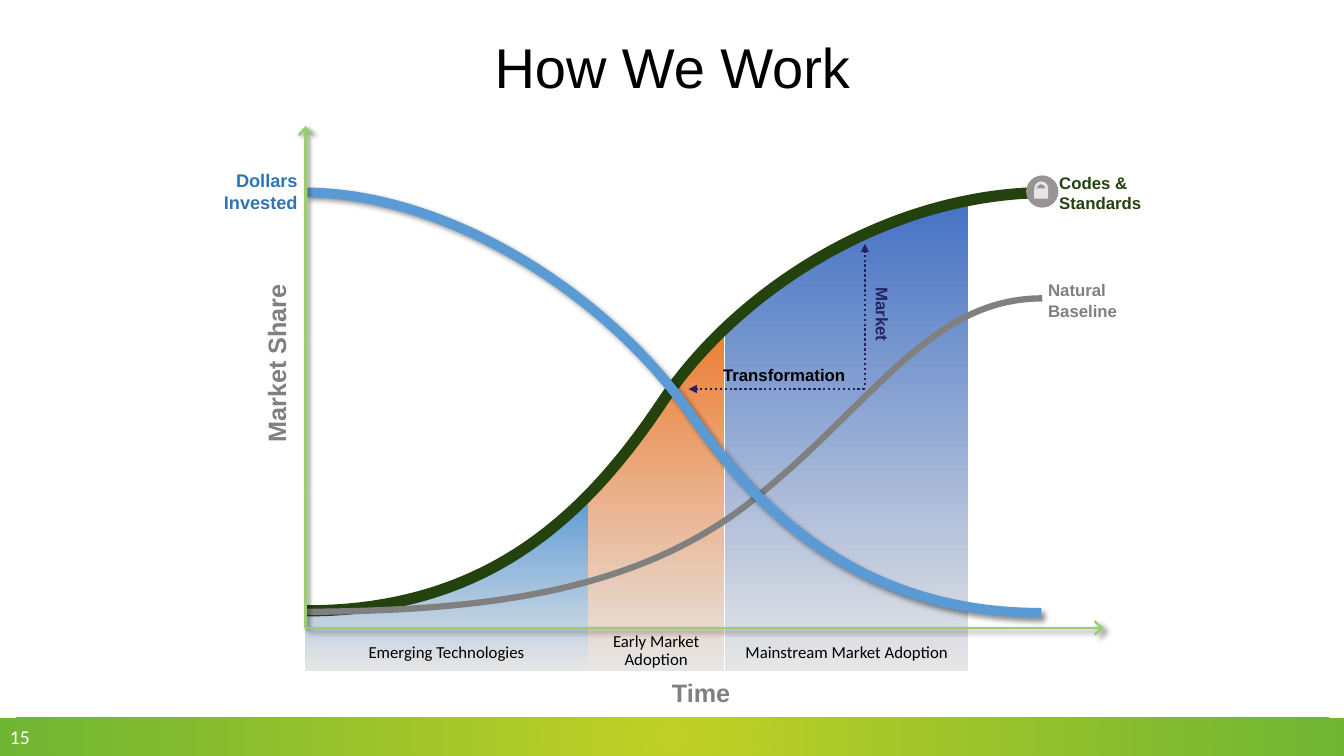
from lxml import etree
from pptx import Presentation
from pptx.dml.color import RGBColor
from pptx.enum.dml import MSO_LINE
from pptx.enum.shapes import MSO_CONNECTOR as CONNECTOR, MSO_SHAPE as SHAPE
from pptx.enum.text import MSO_ANCHOR as ANCHOR, PP_ALIGN as ALIGN
from pptx.oxml.ns import qn
from pptx.util import Inches, Pt

BLACK = RGBColor(0x00, 0x00, 0x00)
WHITE = RGBColor(0xFF, 0xFF, 0xFF)
GRAY = RGBColor(0x80, 0x80, 0x80)
LOCK_GRAY = RGBColor(0x98, 0x94, 0x94)
PALE = RGBColor(0xE7, 0xE6, 0xE6)
SKY = RGBColor(0x5B, 0x9B, 0xD5)
DEEP_SKY = RGBColor(0x2E, 0x75, 0xB6)
ORANGE = RGBColor(0xED, 0x7D, 0x31)
BLUE = RGBColor(0x44, 0x72, 0xC4)
NAVY = RGBColor(0x26, 0x22, 0x62)
FOREST = RGBColor(0x24, 0x42, 0x0E)
AXIS_GREEN = RGBColor(0x9A, 0xCD, 0x72)
LIME = RGBColor(0xC0, 0xD0, 0x25)
LEAF = RGBColor(0x6F, 0xB4, 0x33)


class Diagram:
    heading_font = "Arial"
    body_font = "Calibri"

    def __init__(self, slide):
        self.shapes = slide.shapes

    def effects(self, item, blur=None):
        """Set the outer shadow, or none when no blur is given."""
        props = item._element.spPr
        for old in props.findall(qn("a:effectLst")):
            props.remove(old)
        effects = etree.SubElement(props, qn("a:effectLst"))
        if blur:
            shadow = etree.SubElement(
                effects, qn("a:outerShdw"), blurRad=str(Pt(blur)),
                dist=str(Pt(3 if blur > 3 else 2)), dir="2700000",
                algn="tl", rotWithShape="0")
            color = etree.SubElement(shadow, qn("a:srgbClr"), val="000000")
            etree.SubElement(color, qn("a:alpha"), val="43000")

    def gradient(self, shape, first, last):
        shape.fill.gradient()
        shape.fill.gradient_angle = 270
        for stop, color, place in zip(shape.fill.gradient_stops, (first, last), (0, 1)):
            stop.color.rgb = color
            stop.position = place

    def shape(self, kind, x, y, w, h, color):
        shape = self.shapes.add_shape(kind, Inches(x), Inches(y), Inches(w), Inches(h))
        shape.fill.solid()
        shape.fill.fore_color.rgb = color
        shape.line.fill.background()
        shape.shadow.inherit = False
        return shape

    def outline(self, points, close):
        start, *rest = [(Inches(x), Inches(y)) for x, y in points]
        builder = self.shapes.build_freeform(*start)
        builder.add_line_segments(rest, close=close)
        return builder.convert_to_shape()

    def area(self, top, base, color):
        shape = self.outline(top + [(top[-1][0], base), (top[0][0], base)], True)
        self.gradient(shape, color, PALE)
        shape.line.fill.background()
        self.effects(shape)

    def curve(self, points, color, width, blur=None):
        """Draw a start point followed by cubic bends of two controls and an end."""
        shape = self.outline(points, False)
        segments = list(shape._element.spPr.iter(qn("a:lnTo")))
        for i in range(0, len(segments), 3):
            bend = etree.Element(qn("a:cubicBezTo"))
            segments[i].addprevious(bend)
            for segment in segments[i:i + 3]:
                bend.append(segment[0])
                segment.getparent().remove(segment)
        shape.fill.background()
        shape.line.color.rgb = color
        shape.line.width = Pt(width)
        self.effects(shape, blur)

    def arrow(self, start, end, color, width, head, head_width="med", dash=None, blur=None):
        line = self.shapes.add_connector(
            CONNECTOR.STRAIGHT, *(Inches(v) for v in start + end))
        line.line.color.rgb = color
        line.line.width = Pt(width)
        if dash:
            line.line.dash_style = dash
        etree.SubElement(line._element.spPr.find(qn("a:ln")), qn("a:tailEnd"),
                         type=head, w=head_width)
        self.effects(line, blur)

    def text(self, text, x, y, w, h, size=12, color=BLACK, bold=True, font=None,
             align=ALIGN.LEFT, anchor=ANCHOR.TOP, spacing=None, turn=0, fill=None):
        box = self.shapes.add_textbox(Inches(x), Inches(y), Inches(w), Inches(h))
        box.rotation = turn
        if fill is not None:
            box.fill.solid()
            box.fill.fore_color.rgb = fill
        frame = box.text_frame
        frame.word_wrap = True
        frame.vertical_anchor = anchor
        paragraph = frame.paragraphs[0]
        paragraph.alignment = align
        if spacing:
            paragraph.line_spacing = spacing
        run = paragraph.add_run()
        run.text = text
        run.font.name = font or self.heading_font
        run.font.size = Pt(size)
        run.font.bold = bold
        run.font.color.rgb = color


def main():
    deck = Presentation()
    deck.slide_width, deck.slide_height = Inches(40 / 3), Inches(7.5)
    diagram = Diagram(deck.slides.add_slide(deck.slide_layouts[6]))

    # Footer band, shaded outwards from its centre
    band = diagram.shape(SHAPE.RECTANGLE, 0, 7.12, 13.35, 0.38, LEAF)
    diagram.gradient(band, LIME, LEAF)
    linear = band._element.spPr.find(qn("a:gradFill")).find(qn("a:lin"))
    radial = etree.Element(qn("a:path"), path="circle")
    etree.SubElement(radial, qn("a:fillToRect"), l="50000", t="50000", r="50000", b="50000")
    linear.getparent().replace(linear, radial)
    diagram.text("15", 0, 7.14, 0.86, 0.34, size=14, color=WHITE, bold=False,
                 font=diagram.body_font)

    # Market phases under the adoption curve
    base = 6.66
    emerging = [(3.03, 6.05), (3.39, 6.05), (3.84, 5.99), (4.29, 5.89), (4.69, 5.73),
                (5.22, 5.44), (5.44, 5.29), (5.83, 4.91)]
    early = [(5.83, 4.91), (6.25, 4.42), (6.48, 4.06), (6.77, 3.68), (7.19, 3.23)]
    mainstream = [(7.19, 3.23), (7.67, 2.86), (8.21, 2.5), (8.7, 2.26), (9.26, 2.07),
                  (9.61, 1.99)]
    phases = [
        ("Emerging Technologies", emerging, SKY, 6.32, 0.3, None),
        ("Early Market Adoption", early, ORANGE, 6.23, 0.47, 0.9),
        ("Mainstream Market Adoption", mainstream, BLUE, 6.32, 0.3, None),
    ]
    for _, top, color, *_ in phases:
        diagram.area(top, base, color)

    # Adoption curve and natural baseline
    diagram.curve([(3.04, 6.06), (4.84, 6.06), (5.82, 5.11), (6.57, 3.99),
                   (7.31, 2.88), (8.8, 1.92), (10.38, 1.91)], FOREST, 8)
    diagram.curve([(3.04, 6.07), (4.84, 6.06), (6.37, 5.87), (7.52, 4.92),
                   (8.68, 3.98), (9.24, 2.96), (10.34, 2.96)], GRAY, 4.5)
    diagram.text("Natural Baseline", 10.3, 2.73, 1.06, 0.5, color=GRAY)

    # Axis titles
    diagram.text("Market Share", 1.84, 3.39, 1.8, 0.4, size=18, color=GRAY, turn=270)
    diagram.text("Time", 5.85, 6.67, 2.21, 0.4, size=18, color=GRAY, align=ALIGN.CENTER)

    # Market transformation arrows
    for start, end in (((8.58, 3.86), (6.83, 3.86)), ((8.58, 3.82), (8.58, 2.42))):
        diagram.arrow(start, end, NAVY, 1.75, "triangle", dash=MSO_LINE.ROUND_DOT)
    diagram.text("Transformation", 6.87, 3.57, 1.82, 0.3, align=ALIGN.CENTER)
    diagram.text("Market", 7.85, 2.97, 1.81, 0.3, color=NAVY, align=ALIGN.CENTER, turn=90)

    # Investment curve
    diagram.curve([(3.04, 1.91), (4.48, 1.92), (6.05, 2.95), (6.86, 4.12),
                   (7.67, 5.3), (8.75, 6.08), (10.33, 6.08)], SKY, 7, blur=4)
    diagram.text("Dollars Invested", 1.88, 1.63, 1.17, 0.54, size=13, color=DEEP_SKY,
                 align=ALIGN.RIGHT, anchor=ANCHOR.MIDDLE, fill=WHITE)

    # Axes
    origin = (3.03, 6.23)
    for tip, blur in (((3.03, 1.25), 3), ((10.95, 6.23), 4)):
        diagram.arrow(origin, tip, AXIS_GREEN, 2, "arrow", head_width="lg", blur=blur)

    # Title and remaining labels
    diagram.text("How We Work", 0.67, 0.29, 12, 0.82, size=40, bold=False,
                 align=ALIGN.CENTER, anchor=ANCHOR.MIDDLE, spacing=0.9)
    diagram.text("Codes & Standards", 10.41, 1.66, 1.14, 0.5, color=FOREST)
    for name, top, _, y, height, spacing in phases:
        left, right = top[0][0], top[-1][0]
        diagram.text(name, left, y, right - left, height, bold=False,
                     font=diagram.body_font, align=ALIGN.CENTER, spacing=spacing)

    # Padlock at the end of the adoption curve
    diagram.shape(SHAPE.OVAL, 10.18, 1.74, 0.32, 0.32, LOCK_GRAY)
    diagram.shape(SHAPE.RECTANGLE, 10.26, 1.87, 0.14, 0.1, PALE)
    shackle = diagram.shape(SHAPE.BLOCK_ARC, 10.26, 1.8, 0.14, 0.14, PALE)
    shackle.adjustments[2] = 0.2

    deck.save("out.pptx")


if __name__ == "__main__":
    main()
